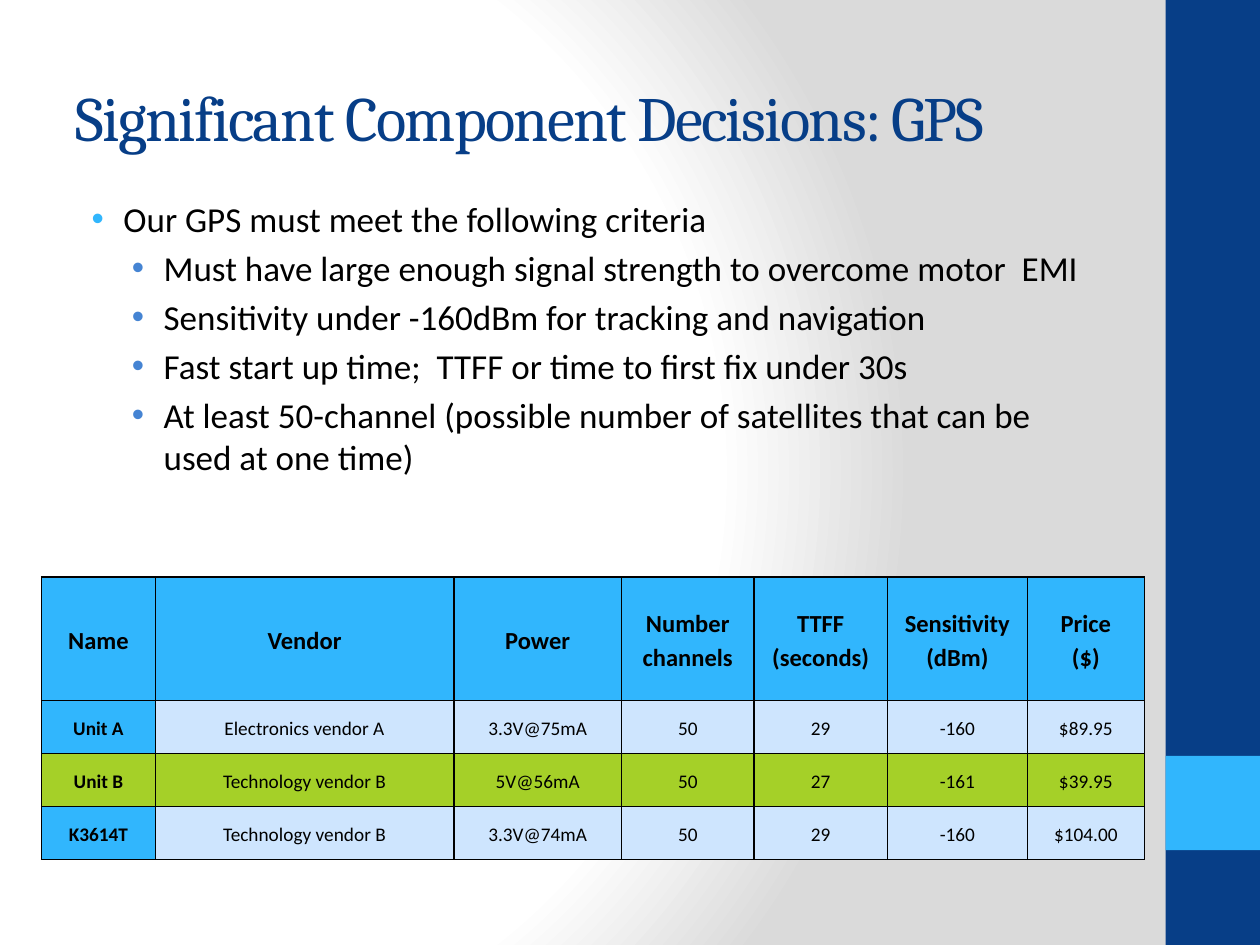
from lxml import etree
from pptx import Presentation
from pptx import util as u
from pptx.dml.color import RGBColor
from pptx.enum import shapes, text
from pptx.oxml import parse_xml
from pptx.oxml.ns import nsdecls, qn

COLORS = {
    "navy": "073E87", "sky": "31B6FD", "blue": "4584D3", "pale": "CEE5FE",
    "green": "A5D028", "black": "000000", "white": "FFFFFF", "grey": "DADADA",
}
CRITERIA = [
    (0, "Our GPS must meet the following criteria"),
    (1, "Must have large enough signal strength to overcome motor  EMI"),
    (1, "Sensitivity under -160dBm for tracking and navigation"),
    (1, "Fast start up time;  TTFF or time to first fix under 30s"),
    (1, "At least 50-channel (possible number of satellites that can be used at one time)"),
]
RECEIVERS = [
    ["Name", "Vendor", "Power", "Number channels", "TTFF\n(seconds)",
     "Sensitivity\n(dBm)", "Price\n($)"],
    ["Unit A", "Electronics vendor A", "3.3V@75mA", "50", "29", "-160", "$89.95"],
    ["Unit B", "Technology vendor B", "5V@56mA", "50", "27", "-161", "$39.95"],
    ["K3614T", "Technology vendor B", "3.3V@74mA", "50", "29", "-160", "$104.00"],
]
COL_WIDTHS = [2.29, 6.02, 3.38, 2.67, 2.69, 2.82, 2.36]
ROW_HEIGHTS = [2.49, 1.07, 1.07, 1.07]
CHOSEN_ROW = 2


def rgb(name):
    return RGBColor.from_string(COLORS[name])


def box(*lengths):
    return [u.Cm(n) for n in lengths]


class Deck:
    """Holds the style and the current slide."""

    heading_font = "Cambria"
    body_font = "Calibri"

    def __init__(self, s):
        self.s = s

    def run(self, p, words, size, color="black", font=None, bold=False):
        r = p.add_run()
        r.text = words
        r.font.size = u.Pt(size)
        r.font.name = font or self.body_font
        r.font.bold = bold
        r.font.color.rgb = rgb(color)
        return r

    def background(self, stops, rect):
        """Circular gradient; rect gives the focus as l, t, r, b in percent."""
        gs = "".join(f'<a:gs pos="{pos * 1000}"><a:srgbClr val="{COLORS[c]}"/></a:gs>'
                     for pos, c in stops)
        sides = " ".join(f'{k}="{v * 1000}"' for k, v in zip("ltrb", rect))
        self.s.element.cSld.insert(0, parse_xml(
            f'<p:bg {nsdecls("p", "a")}><p:bgPr><a:gradFill rotWithShape="1">'
            f'<a:gsLst>{gs}</a:gsLst><a:path path="circle"><a:fillToRect {sides}/></a:path>'
            '</a:gradFill><a:effectLst/></p:bgPr></p:bg>'))

    def bar(self, color, *place):
        sp = self.s.shapes.add_shape(shapes.MSO_SHAPE.RECTANGLE, *box(*place))
        sp.shadow.inherit = False
        sp.fill.solid()
        sp.fill.fore_color.rgb = rgb(color)
        sp.line.fill.background()

    def title(self, words, *place):
        sp = self.s.shapes.title
        sp.left, sp.top, sp.width, sp.height = box(*place)
        tf = sp.text_frame
        tf.vertical_anchor = text.MSO_ANCHOR.MIDDLE
        p = tf.paragraphs[0]
        p.alignment = text.PP_ALIGN.LEFT
        r = self.run(p, words, 36, "navy", self.heading_font)
        r.font._element.set("spc", "-100")

    def bullets(self, items, *place):
        tf = self.s.shapes.add_textbox(*box(*place)).text_frame
        tf.word_wrap = True
        for i, (level, words) in enumerate(items):
            p = tf.add_paragraph() if i else tf.paragraphs[0]
            p.level = level
            p.space_before = u.Pt(4)
            pPr = p._p.get_or_add_pPr()
            pPr.set("marL", str(u.Cm((0.97, 1.78)[level])))
            pPr.set("indent", str(u.Cm(-0.64)))
            color = etree.SubElement(pPr, qn("a:buClr"))
            etree.SubElement(color, qn("a:srgbClr"), val=COLORS[("sky", "blue")[level]])
            etree.SubElement(pPr, qn("a:buFont"), typeface="Arial")
            etree.SubElement(pPr, qn("a:buChar"), char="•")
            self.run(p, words, 20)

    def cell(self, cell, words, fill, size, bold):
        cell.margin_left = cell.margin_right = u.Cm(0.18)
        cell.margin_top = cell.margin_bottom = 0
        cell.vertical_anchor = text.MSO_ANCHOR.MIDDLE
        tcPr = cell._tc.get_or_add_tcPr()
        for side in ("lnL", "lnR", "lnT", "lnB"):
            ln = etree.SubElement(tcPr, qn(f"a:{side}"), w=str(u.Pt(1)))
            solid = etree.SubElement(ln, qn("a:solidFill"))
            etree.SubElement(solid, qn("a:srgbClr"), val=COLORS["black"])
        cell.fill.solid()
        cell.fill.fore_color.rgb = rgb(fill)
        p = cell.text_frame.paragraphs[0]
        p.alignment = text.PP_ALIGN.CENTER
        p.line_spacing = 1.15
        for i, line in enumerate(words.split("\n")):
            if i:
                p.add_line_break()
            self.run(p, line, size, bold=bold)

    def table(self, rows, widths, heights, left, top):
        place = box(left, top, sum(widths), sum(heights))
        tbl = self.s.shapes.add_table(len(rows), len(widths), *place).table
        for col, width in zip(tbl.columns, widths):
            col.width = u.Cm(width)
        for row, height in zip(tbl.rows, heights):
            row.height = u.Cm(height)
        for i, row in enumerate(rows):
            for j, words in enumerate(row):
                heading = i == 0 or j == 0
                fill = "green" if i == CHOSEN_ROW else "sky" if heading else "pale"
                self.cell(tbl.cell(i, j), words, fill, 11 if i else 14, heading)


def main():
    prs = Presentation()
    prs.slide_width, prs.slide_height = box(25.4, 19.05)
    deck = Deck(prs.slides.add_slide(prs.slide_layouts[5]))
    deck.background([(0, "white"), (75, "white"), (100, "grey")], (20, 50, 100, 50))
    deck.bar("navy", 23.5, 0, 1.9, 19.05)
    deck.bar("sky", 23.5, 15.24, 1.9, 1.9)
    deck.title("Significant Component Decisions: GPS", 1.27, 0.76, 21.16, 3.18)
    deck.bullets(CRITERIA, 1.27, 3.86, 21.16, 13.34)
    deck.table(RECEIVERS, COL_WIDTHS, ROW_HEIGHTS, 0.84, 11.63)
    prs.save("out.pptx")


if __name__ == "__main__":
    main()
